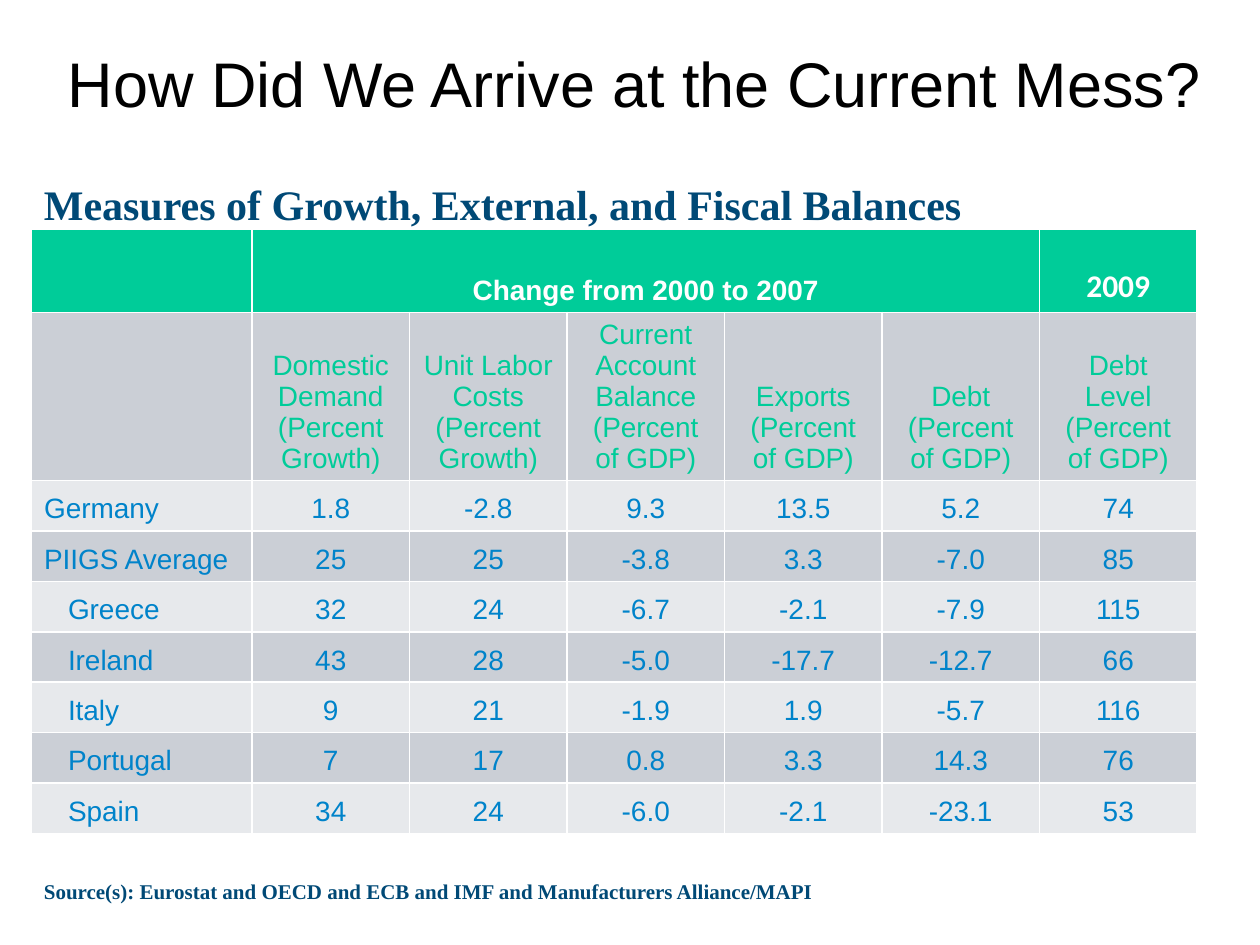
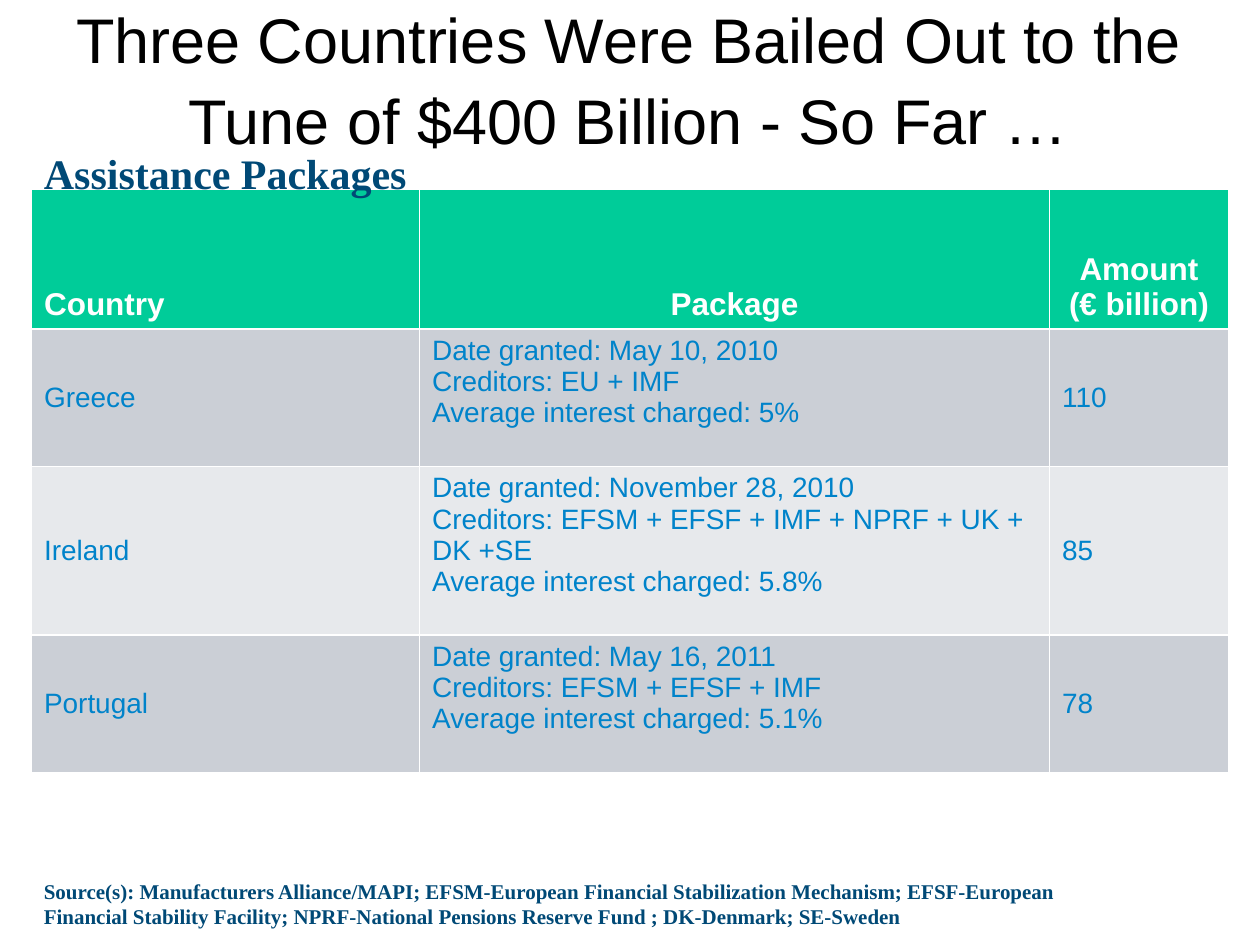
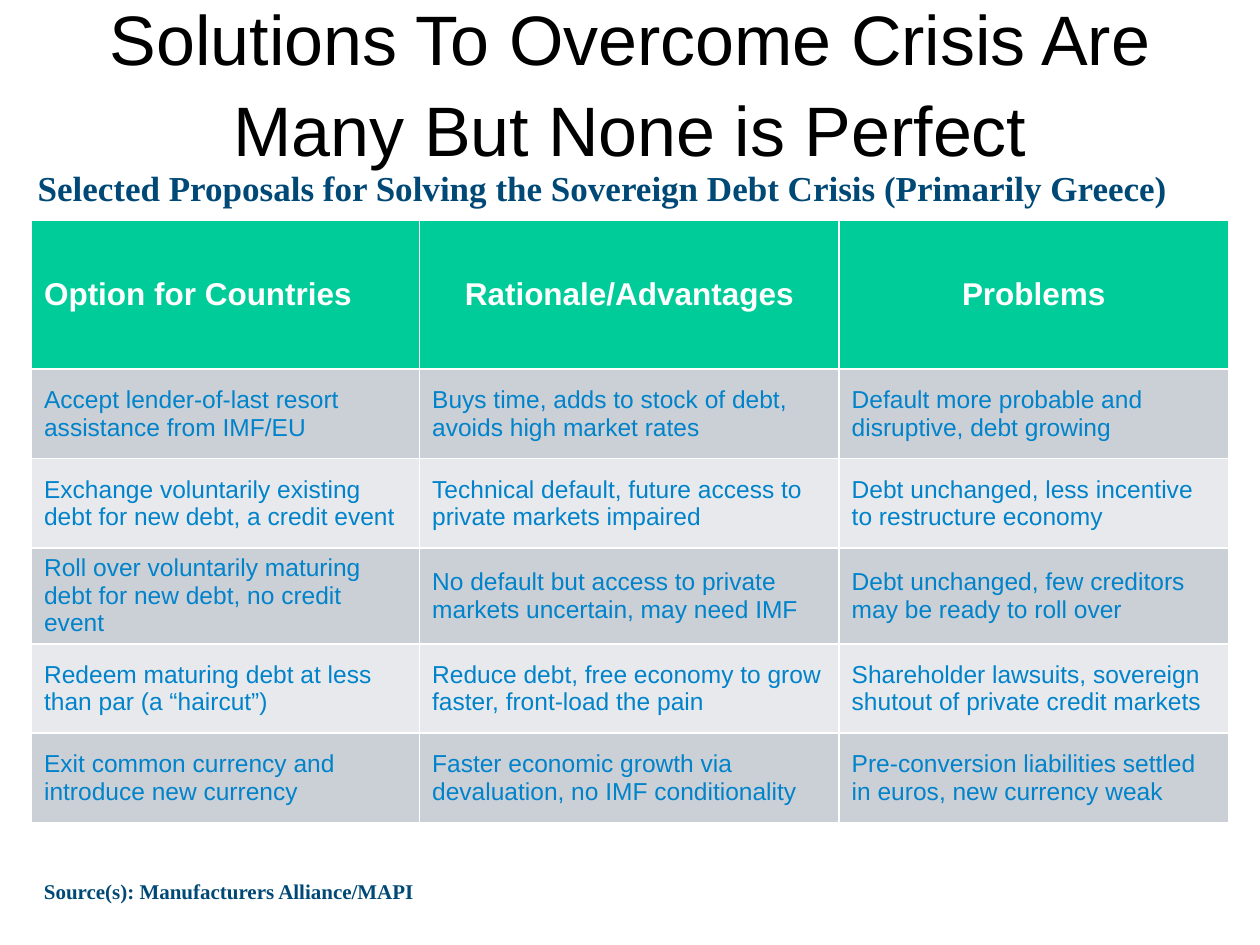
from pptx import Presentation
from pptx.dml.color import RGBColor
from pptx.enum.text import MSO_ANCHOR as Anchor, MSO_AUTO_SIZE as AutoSize, PP_ALIGN as Align
from pptx.util import Inches, Pt

# Shared look
BLACK, WHITE, NAVY, BLUE = "000000", "FFFFFF", "004976", "0083CA"
GREEN, DARK_BAND, LIGHT_BAND = "00CC99", "CBCFD6", "E7E9EC"
SANS, SERIF = "Arial", "Times New Roman"
LEFT = 0.25
SOURCE_TOP = 6.92
LINE = 0.25    # one line of 16 pt table text
INDENT = 0.19  # extra left margin of a sub-entry

# Content
BALANCES = [
    ("", "Change from 2000 to 2007", None, None, None, None, "2009"),
    ("", "Domestic Demand (Percent Growth)", "Unit Labor Costs (Percent Growth)",
     "Current Account Balance (Percent of GDP)", "Exports (Percent of GDP)",
     "Debt (Percent of GDP)", "Debt Level (Percent of GDP)"),
    ("Germany", "1.8", "-2.8", "9.3", "13.5", "5.2", "74"),
    ("PIIGS Average", "25", "25", "-3.8", "3.3", "-7.0", "85"),
    ("Greece", "32", "24", "-6.7", "-2.1", "-7.9", "115"),
    ("Ireland", "43", "28", "-5.0", "-17.7", "-12.7", "66"),
    ("Italy", "9", "21", "-1.9", "1.9", "-5.7", "116"),
    ("Portugal", "7", "17", "0.8", "3.3", "14.3", "76"),
    ("Spain", "34", "24", "-6.0", "-2.1", "-23.1", "53"),
]
PIIGS_START = 4  # first row of the single countries

PACKAGES = [
    ("Country", "Package", "Amount (€ billion)"),
    ("Greece", "Date granted: May 10, 2010\nCreditors: EU + IMF\n"
     "Average interest charged: 5%", "110"),
    ("Ireland", "Date granted: November 28, 2010\n"
     "Creditors: EFSM + EFSF + IMF + NPRF + UK + DK +SE\n"
     "Average interest charged: 5.8%", "85"),
    ("Portugal", "Date granted: May 16, 2011\nCreditors: EFSM + EFSF + IMF\n"
     "Average interest charged: 5.1%", "78"),
]

PROPOSALS = [
    ("Option for Countries", "Rationale/Advantages", "Problems"),
    ("Accept lender-of-last resort assistance from IMF/EU",
     "Buys time, adds to stock of debt, avoids high market rates",
     "Default more probable and disruptive, debt growing"),
    ("Exchange voluntarily existing debt for new debt, a credit event",
     "Technical default, future access to private markets impaired",
     "Debt unchanged, less incentive to restructure economy"),
    ("Roll over voluntarily maturing debt for new debt, no credit event",
     "No default but access to private markets uncertain, may need IMF",
     "Debt unchanged, few creditors may be ready to roll over"),
    ("Redeem maturing debt at less than par (a “haircut”)",
     "Reduce debt, free economy to grow faster, front-load the pain",
     "Shareholder lawsuits, sovereign shutout of private credit markets"),
    ("Exit common currency and introduce new currency",
     "Faster economic growth via devaluation, no IMF conditionality",
     "Pre-conversion liabilities settled in euros, new currency weak"),
]


def color(value):
    return RGBColor.from_string(value)


def style(para, size, font, ink, bold=False, align=Align.LEFT):
    para.alignment = align
    para.font.size, para.font.name, para.font.bold = Pt(size), font, bold
    para.font.color.rgb = color(ink)


def add_label(page, text, place, size, margin_top=0.05):
    """Bold navy serif line: the table heading or the source note."""
    box = page.shapes.add_textbox(*map(Inches, place))
    frame = box.text_frame
    frame.word_wrap = True
    frame.margin_top = Inches(margin_top)
    frame.text = text
    style(frame.paragraphs[0], size, SERIF, NAVY, bold=True)


def add_page(deck, title, title_place, title_size):
    page = deck.slides.add_slide(deck.slide_layouts[5])
    box = page.shapes.title
    box.left, box.top, box.width, box.height = map(Inches, title_place)
    frame = box.text_frame
    frame.text = title
    frame.word_wrap, frame.auto_size = True, AutoSize.NONE
    frame.vertical_anchor = Anchor.MIDDLE
    style(frame.paragraphs[0], title_size, SANS, BLACK, align=Align.CENTER)
    frame.paragraphs[0].line_spacing = 1.08
    return page


def add_grid(page, rows, top, widths, heights, head_size, body_size,
             head_anchor, body_anchor, body_align):
    """Table with a green head row and alternating grey bands."""
    place = (LEFT, top, sum(widths), sum(heights))
    table = page.shapes.add_table(len(rows), len(widths), *map(Inches, place)).table
    for column, width in zip(table.columns, widths):
        column.width = Inches(width)
    for row, height in zip(table.rows, heights):
        row.height = Inches(height)
    for r, row in enumerate(rows):
        head = r == 0
        band = GREEN if head else DARK_BAND if r % 2 else LIGHT_BAND
        for c, text in enumerate(row):
            cell = table.cell(r, c)
            cell.fill.solid()
            cell.fill.fore_color.rgb = color(band)
            cell.vertical_anchor = head_anchor if head else body_anchor
            cell.text = text or ""
            align = Align.LEFT if c == 0 else Align.CENTER if head else body_align
            for para in cell.text_frame.paragraphs:
                style(para, head_size if head else body_size, SANS,
                      WHITE if head else BLUE, head, align)
    return table


def add_balances(deck):
    page = add_page(deck, "How Did We Arrive at the Current Mess?",
                    (0.35, 0.17, 9.37, 0.92), 36)
    table = add_grid(page, BALANCES, 1.82, [1.75] + [1.25] * 6,
                     [0.66, 1.32] + [0.4] * 7, 16, 16,
                     Anchor.BOTTOM, Anchor.BOTTOM, Align.CENTER)
    table.cell(0, 1).merge(table.cell(0, 5))
    style(table.cell(0, 6).text_frame.paragraphs[0], 18, "Calibri", WHITE, True, Align.CENTER)
    for c in range(1, 7):
        table.cell(1, c).text_frame.paragraphs[0].font.color.rgb = color(GREEN)
    for r in range(PIIGS_START, len(BALANCES)):
        table.cell(r, 0).margin_left = Inches(0.1 + INDENT)
    add_label(page, "Source(s): Eurostat and OECD and ECB and IMF and Manufacturers Alliance/MAPI",
              (LEFT, SOURCE_TOP, 8.42, 0.3), 12)
    add_label(page, "Measures of Growth, External, and Fiscal Balances",
              (LEFT, 1.33, 9.35, 0.42), 24, 0.09)


def add_packages(deck):
    page = add_page(deck, "Three Countries Were Bailed Out to the Tune of $400 Billion - So Far …",
                    (0.25, 0.25, 9.48, 0.7), 36)
    table = add_grid(page, PACKAGES, 1.5, [3.08, 5, 1.42], [1.11, 1.08, 1.34, 1.08],
                     18, 16, Anchor.BOTTOM, Anchor.MIDDLE, Align.LEFT)
    for r in range(1, len(PACKAGES)):
        table.cell(r, 1).margin_bottom = Inches(0.05 + LINE)
    add_label(page, "Source(s): Manufacturers Alliance/MAPI; EFSM-European Financial Stabilization "
              "Mechanism; EFSF-European Financial Stability Facility; NPRF-National Pensions "
              "Reserve Fund ; DK-Denmark; SE-Sweden", (LEFT, SOURCE_TOP, 8.5, 0.51), 12)
    add_label(page, "Assistance Packages", (LEFT, 1.08, 9.35, 0.42), 24, 0.09)


def add_proposals(deck):
    page = add_page(deck, "Solutions To Overcome Crisis Are Many But None is Perfect",
                    (0.75, 0.17, 8.5, 0.92), 40)
    add_grid(page, PROPOSALS, 1.75, [3.08, 3.33, 3.09],
             [1.18, 0.71, 0.71, 0.76, 0.71, 0.71], 18, 14,
             Anchor.MIDDLE, Anchor.MIDDLE, Align.LEFT)
    add_label(page, "Source(s): Manufacturers Alliance/MAPI", (LEFT, SOURCE_TOP, 8.42, 0.3), 12)
    add_label(page, "Selected Proposals for Solving the Sovereign Debt Crisis (Primarily Greece)",
              (0.2, 1.23, 9.4, 0.42), 20, 0.09)


def main():
    deck = Presentation()
    deck.slide_width, deck.slide_height = Inches(10), Inches(7.5)
    add_balances(deck)
    add_packages(deck)
    add_proposals(deck)
    deck.save("out.pptx")


if __name__ == "__main__":
    main()
